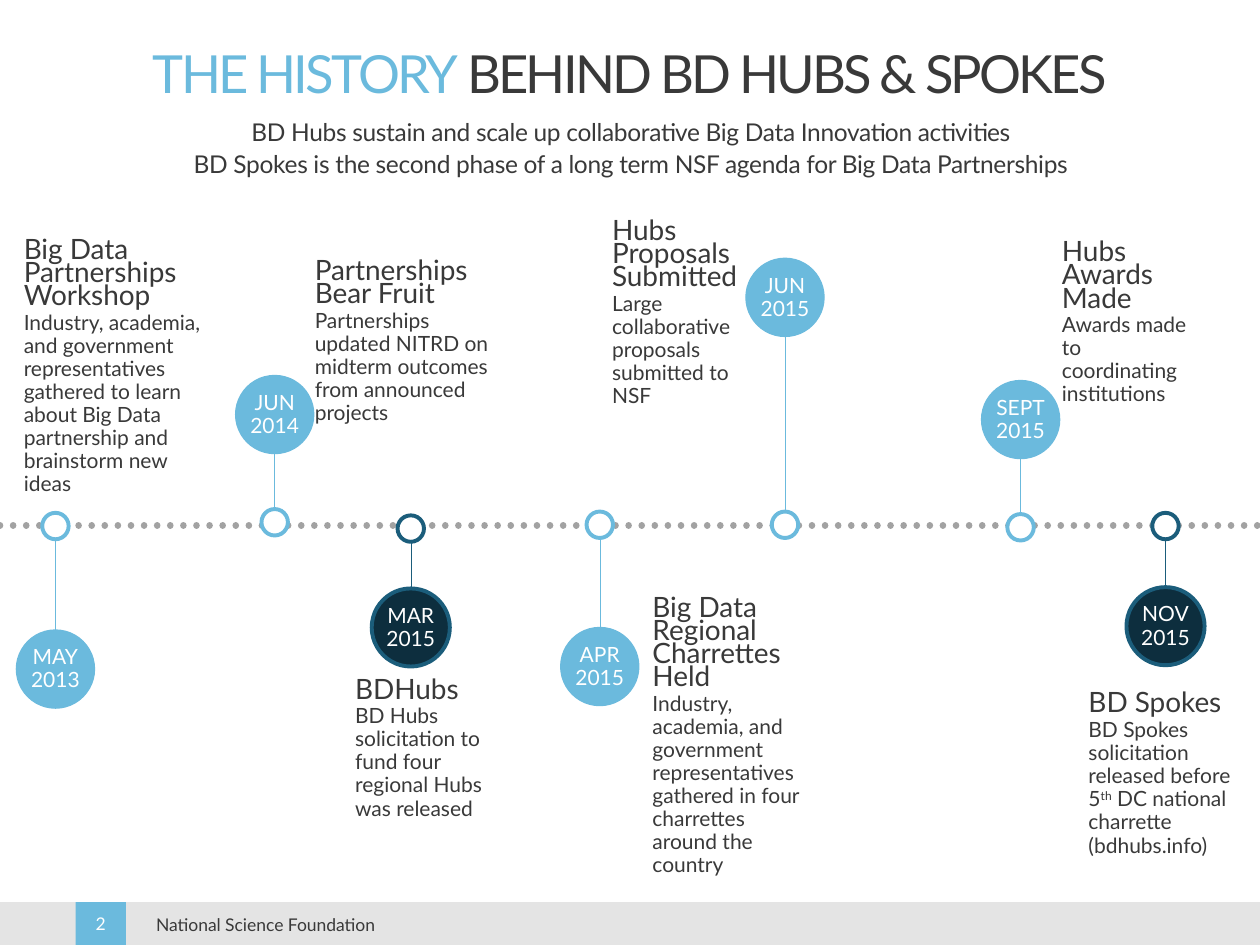
"""Build the timeline slide on the history of BD Hubs and Spokes."""
from dataclasses import dataclass
from typing import Optional

from lxml import etree
from pptx import Presentation
from pptx.dml.color import RGBColor
from pptx.enum.dml import MSO_LINE
from pptx.enum.shapes import MSO_CONNECTOR, MSO_SHAPE
from pptx.enum.text import MSO_ANCHOR, MSO_AUTO_SIZE, PP_ALIGN
from pptx.oxml.ns import qn
from pptx.util import Pt

OVAL, RECT = MSO_SHAPE.OVAL, MSO_SHAPE.RECTANGLE
STRAIGHT = MSO_CONNECTOR.STRAIGHT
CENTER, LEFT = PP_ALIGN.CENTER, PP_ALIGN.LEFT
TOP, MIDDLE, BOTTOM = MSO_ANCHOR.TOP, MSO_ANCHOR.MIDDLE, MSO_ANCHOR.BOTTOM
FIT, FIXED = MSO_AUTO_SIZE.SHAPE_TO_FIT_TEXT, MSO_AUTO_SIZE.NONE

EMU_PER_PX = 9144
FONT = "Lato"
BADGE, RING = 62, 21
LEADING = Pt(13.2)
COLORS = {
    "text": "393939", "white": "FFFFFF", "blue": "6BBADD", "navy": "0D2E3E",
    "teal": "1B5D7B", "dots": "A2A2A2", "bar": "E4E4E4",
}


@dataclass
class Note:
    left: int
    top: int
    width: int
    height: int
    heading: str
    body: str
    superscript: str = ""
    rest: str = ""


@dataclass
class Milestone:
    month: str
    year: str
    left: int
    badge_top: int
    ring_top: int
    note: Optional[Note] = None
    dark: bool = False


MILESTONES = [
    Milestone("MAY", "2013", 13, 500, 407, Note(
        9, 187, 171, 211, "Big Data Partnerships Workshop",
        "Industry, academia, and government representatives gathered to learn "
        "about Big Data partnership and brainstorm new ideas")),
    Milestone("JUN", "2014", 187, 298, 404, Note(
        240, 204, 173, 138, "Partnerships Bear Fruit",
        "Partnerships updated NITRD on midterm outcomes from announced projects")),
    Milestone("MAR", "2015", 295, 467, 409, Note(
        272, 536, 123, 119, "BDHubs",
        "BD Hubs solicitation to fund four regional Hubs was released"), True),
    Milestone("APR", "2015", 445, 498, 406, Note(
        508, 471, 145, 229, "Big Data Regional Charrettes Held",
        "Industry, academia, and government representatives gathered in four "
        "charrettes around the country")),
    Milestone("JUN", "2015", 592, 205, 406, Note(
        476, 172, 120, 156, "Hubs Proposals Submitted",
        "Large collaborative proposals submitted to NSF")),
    Milestone("SEPT", "2015", 779, 302, 408, Note(
        833, 189, 121, 138, "Hubs Awards Made",
        "Awards made to coordinating institutions")),
    Milestone("NOV", "2015", 894, 466, 407, Note(
        854, 547, 141, 138, "BD Spokes", "BD Spokes solicitation released before 5",
        "th", " DC national charrette (bdhubs.info)"), True),
]


def px(n: float) -> int:
    return round(n * EMU_PER_PX)


def rgb(name: str) -> RGBColor:
    return RGBColor.from_string(COLORS[name])


def add_run(p, text: str, size: float, color="text", spacing=0, baseline=0) -> None:
    r = p.add_run()
    r.text = text
    r.font.size, r.font.name = Pt(size), FONT
    r.font.color.rgb = rgb(color)
    for key, value in (("spc", spacing), ("baseline", baseline)):
        if value:
            r.font._element.set(key, str(value))


def set_frame(tf, anchor=TOP, wrap=True, fit=FIXED, margins=(10, 5, 10, 5)) -> None:
    tf.auto_size, tf.word_wrap, tf.vertical_anchor = fit, wrap, anchor
    tf.margin_left, tf.margin_top, tf.margin_right, tf.margin_bottom = map(px, margins)


def next_paragraph(tf, index: int, align=LEFT, leading=LEADING, before=0):
    p = tf.add_paragraph() if index else tf.paragraphs[0]
    p.alignment, p.line_spacing, p.space_before = align, leading, Pt(before)
    return p


def add_box(s, left: int, top: int, width: int, height: int):
    return s.shapes.add_textbox(*map(px, (left, top, width, height)))


def add_filled(s, kind, left, top, width, height, fill: str, line="", weight=0.75):
    sp = s.shapes.add_shape(kind, *map(px, (left, top, width, height)))
    sp.shadow.inherit = False
    sp.fill.solid()
    sp.fill.fore_color.rgb = rgb(fill)
    if line:
        sp.line.color.rgb, sp.line.width = rgb(line), Pt(weight)
    else:
        sp.line.fill.background()
    return sp


def add_line(s, x1: float, y1: float, x2: float, y2: float, color: str, weight: float):
    cxn = s.shapes.add_connector(STRAIGHT, *map(px, (x1, y1, x2, y2)))
    cxn.line.color.rgb, cxn.line.width = rgb(color), Pt(weight)
    etree.SubElement(cxn._element.spPr, qn("a:effectLst"))
    return cxn


def add_note(s, note: Note) -> None:
    tf = add_box(s, note.left, note.top, note.width, note.height).text_frame
    set_frame(tf, fit=FIT)
    add_run(next_paragraph(tf, 0), note.heading, 16)
    p = next_paragraph(tf, 1)
    add_run(p, note.body, 12)
    if note.superscript:
        add_run(p, note.superscript, 12, baseline=30000)
        add_run(p, note.rest, 12)


def add_milestone(s, m: Milestone) -> None:
    fill, line, weight = ("navy", "teal", 2.25) if m.dark else ("blue", "blue", 0.75)
    center = m.left + BADGE / 2
    badge = add_filled(s, OVAL, m.left, m.badge_top, BADGE, BADGE, fill, line, weight)
    set_frame(badge.text_frame, MIDDLE, wrap=False, margins=(0, 5, 0, 5))
    p = next_paragraph(badge.text_frame, 0, CENTER)
    add_run(p, m.month, 12, "white")
    p.add_line_break()
    add_run(p, m.year, 12, "white")
    add_filled(s, OVAL, center - RING / 2, m.ring_top, RING, RING, "white", line, 2.25)
    if m.badge_top > m.ring_top:
        start, end = m.ring_top + RING, m.badge_top
    else:
        start, end = m.badge_top + BADGE, m.ring_top
    add_line(s, center, start, center, end, line, 0.25)
    if m.note:
        add_note(s, m.note)


def add_header(s) -> None:
    title = s.shapes.title
    title.left, title.top, title.width, title.height = map(px, (61, 22, 878, 61))
    set_frame(title.text_frame, BOTTOM, margins=(0, 5, 0, 0))
    p = next_paragraph(title.text_frame, 0, CENTER, 0.85)
    add_run(p, "THE HISTORY ", 30, "blue", -160)
    add_run(p, "BEHIND BD HUBS & SPOKES", 30, spacing=-160)
    tf = add_box(s, 61, 91, 879, 60).text_frame
    set_frame(tf, margins=(0, 5, 0, 0))
    lines = (
        ("BD Hubs sustain and scale up collaborative Big Data Innovation activities", 11),
        ("BD Spokes is the second phase of a long term NSF agenda for Big Data Partnerships", 3),
    )
    for i, (text, before) in enumerate(lines):
        add_run(next_paragraph(tf, i, CENTER, 0.89, before), text, 14, spacing=-20)


def add_footer(s) -> None:
    add_filled(s, RECT, 0, 716, 1000, 34, "bar")
    tf = add_box(s, 114, 716, 512, 35).text_frame
    set_frame(tf, MIDDLE)
    add_run(next_paragraph(tf, 0, leading=1.0), "National Science Foundation", 10)
    tf = add_filled(s, RECT, 60, 716, 40, 34, "blue").text_frame
    set_frame(tf, MIDDLE, wrap=False)
    add_run(next_paragraph(tf, 0, CENTER, 1.0), "2", 10, "white")


def main() -> None:
    prs = Presentation()
    prs.slide_width, prs.slide_height = px(1000), px(750)
    s = prs.slides.add_slide(prs.slide_layouts[5])
    add_footer(s)
    add_header(s)
    axis = add_line(s, 0, 417, 1000, 417, "dots", 3.75)
    axis.line.dash_style = MSO_LINE.ROUND_DOT
    axis.line._get_or_add_ln().set("cap", "rnd")
    for m in MILESTONES:
        add_milestone(s, m)
    prs.save("out.pptx")


if __name__ == "__main__":
    main()
